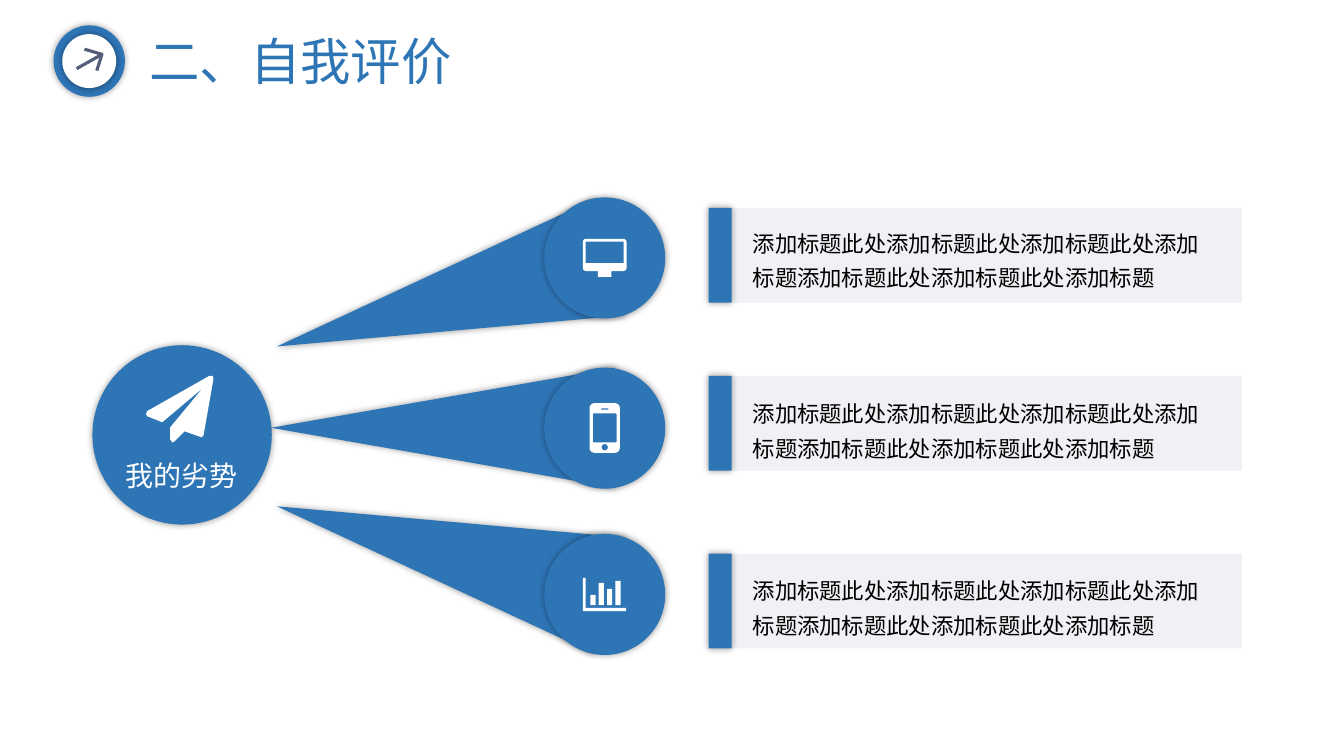
import math

from lxml import etree
from pptx import Presentation
from pptx import util as u
from pptx.dml import color
from pptx.enum import shapes, text
from pptx.oxml import ns

COLORS = {"blue": "2E75B6", "white": "FFFFFF", "slate": "545D79",
          "panel": "EBEEF2", "black": "000000"}
SHAPE = shapes.MSO_SHAPE
CJK = "Noto Sans CJK JP"
BODY = "添加标题此处添加标题此处添加标题此处添加标题添加标题此处添加标题此处添加标题"


def rgb(name):
    return color.RGBColor.from_string(COLORS[name])


def set_format(obj, values):
    for key, value in values.items():
        setattr(obj, key, value)


def sub(parent, tag, **attrs):
    return etree.SubElement(parent, ns.qn(tag), attrs)


def paint(sp, fill):
    sp.fill.solid()
    sp.fill.fore_color.rgb = rgb(fill)
    sp.line.fill.background()
    sp.shadow.inherit = False


def add_glow(sp):
    effects = sp._element.spPr.find(ns.qn("a:effectLst"))
    shadow = sub(effects, "a:outerShdw", blurRad=str(u.Pt(5)), dist="0",
                 dir="0", algn="ctr", rotWithShape="0")
    sub(sub(shadow, "a:srgbClr", val=COLORS["black"]), "a:alpha", val="40000")


def add_preset(s, kind, left, top, width, height, fill="blue", glow=True):
    sp = s.shapes.add_shape(kind, u.Cm(left), u.Cm(top), u.Cm(width), u.Cm(height))
    paint(sp, fill)
    if glow:
        add_glow(sp)
    return sp


def add_circle(s, cx, cy, d, fill="blue"):
    return add_preset(s, SHAPE.OVAL, cx - d / 2, cy - d / 2, d, d, fill)


def add_wedge(s, cx, cy, angle):
    w, h = 3.02, 8.66
    sp = add_preset(s, SHAPE.FLOWCHART_MERGE, cx - w / 2, cy - h / 2, w, h)
    sp.rotation = angle


def add_outline(s, contours, cx=0, cy=0, closed=True):
    builder = None
    for contour in contours:
        pts = [(u.Cm(cx + x), u.Cm(cy + y)) for x, y in contour]
        if builder is None:
            builder = s.shapes.build_freeform(*pts[0])
        else:
            builder.move_to(*pts[0])
        builder.add_line_segments(pts[1:], close=closed)
    sp = builder.convert_to_shape()
    paint(sp, "white")
    return sp


def box(left, top, right, bottom, r=0):
    if not r:
        return [(left, top), (right, top), (right, bottom), (left, bottom)]
    corners = [(right - r, bottom - r), (left + r, bottom - r),
               (left + r, top + r), (right - r, top + r)]
    steps = 6
    return [(x + r * math.cos(a), y + r * math.sin(a))
            for i, (x, y) in enumerate(corners)
            for a in [(i + k / steps) * math.pi / 2 for k in range(steps + 1)]]


def monitor():
    return [box(-0.55, -0.48, 0.55, 0.33, 0.08), box(-0.48, -0.41, 0.48, 0.13),
            box(-0.17, 0.33, 0.17, 0.48)]


def phone():
    return [box(-0.38, -0.63, 0.38, 0.62, 0.12), box(-0.3, -0.37, 0.3, 0.36, 0.02),
            box(-0.09, -0.5, 0.09, -0.47), box(-0.08, 0.4, 0.08, 0.56, 0.08)]


def bar_chart():
    axes = [(-0.55, 0.42), (-0.55, -0.42), (-0.48, -0.42), (-0.48, 0.34),
            (0.54, 0.34), (0.54, 0.42)]
    bars = [box(-0.36 + 0.21 * i, 0.27 - h, -0.23 + 0.21 * i, 0.27)
            for i, h in enumerate([0.26, 0.56, 0.41, 0.61])]
    return [axes] + bars


def write(sp, content, size, font, fill, frame=None, para=None):
    tf = sp.text_frame
    set_format(tf, {"word_wrap": True, "vertical_anchor": text.MSO_ANCHOR.TOP,
                    "auto_size": text.MSO_AUTO_SIZE.SHAPE_TO_FIT_TEXT, **(frame or {})})
    p = tf.paragraphs[0]
    set_format(p, {"alignment": text.PP_ALIGN.LEFT, **(para or {})})
    r = p.add_run()
    r.text = content
    set_format(r.font, {"size": u.Pt(size), "name": font})
    r.font.color.rgb = rgb(fill)
    sub(r.font._element, "a:ea", typeface=font)


def add_text(s, left, top, width, height, *args, **kwargs):
    sp = s.shapes.add_textbox(u.Cm(left), u.Cm(top), u.Cm(width), u.Cm(height))
    write(sp, *args, **kwargs)


def add_header(s):
    cx, cy = 2.25, 1.54
    add_circle(s, cx, cy, 1.8)
    add_circle(s, cx, cy, 1.36, "white")
    tip = (2.57, 1.37)
    head = add_outline(s, [[(2.13, 1.24), tip, (2.44, 1.78)]], closed=False)
    head.fill.background()
    shaft = s.shapes.add_connector(shapes.MSO_CONNECTOR.STRAIGHT, u.Cm(1.93), u.Cm(1.73),
                                   *map(u.Cm, tip))
    sub(shaft._element.spPr, "a:effectLst")
    for sp in (head, shaft):
        sp.line.color.rgb = rgb("slate")
        sp.line.width = u.Pt(2.25)
    title = s.shapes.title
    set_format(title, {"left": u.Cm(3.51), "top": u.Cm(0.64),
                       "width": u.Cm(14.43), "height": u.Cm(1.78)})
    write(title, "二、自我评价", 36, CJK, "blue")


def add_hub(s):
    add_circle(s, 4.59, 10.96, 4.52)
    add_outline(s, [[(5.38, 9.55), (5.13, 10.97), (5.08, 11.02), (4.65, 10.87),
                     (4.39, 11.13), (4.34, 11.15), (4.29, 11.07), (4.29, 10.77),
                     (5.11, 9.78), (4.09, 10.64), (3.71, 10.49), (3.68, 10.44),
                     (3.71, 10.36), (5.28, 9.47), (5.36, 9.47)]])
    margins = {"margin_" + side: 0 for side in ("left", "top", "right", "bottom")}
    add_text(s, 2.72, 11.56, 3.73, 0.84, "我的劣势", 20, CJK, "white",
             frame=margins, para={"alignment": text.PP_ALIGN.CENTER})


def add_card(s, top, text_top):
    height = 2.39
    panel = add_preset(s, SHAPE.RECTANGLE, 18.42, top, 12.88, height, "panel", False)
    sub(panel._element.spPr.find(".//" + ns.qn("a:srgbClr")), "a:alpha", val="80000")
    add_preset(s, SHAPE.RECTANGLE, 17.86, top, 0.58, height)
    add_text(s, 18.72, text_top, 12.29, 2, BODY, 16, "Calibri", "black",
             para={"line_spacing": 1.3})


def main():
    prs = Presentation()
    set_format(prs, {"slide_width": u.Cm(33.87), "slide_height": u.Cm(19.05)})
    s = prs.slides.add_slide(prs.slide_layouts[5])
    add_header(s)
    branches = [(7.61, 75, 6.5, monitor(), 5.24, 5.46),
                (10.78, 90, 10.79, phone(), 9.47, 9.75),
                (13.88, 105, 14.98, bar_chart(), 13.95, 14.22)]
    for wedge_y, angle, circle_y, icon, card_top, text_top in branches:
        add_wedge(s, 11.16, wedge_y, angle)
        add_circle(s, 15.24, circle_y, 3.05)
        add_outline(s, icon, 15.24, circle_y)
        add_card(s, card_top, text_top)
    add_hub(s)
    prs.save("out.pptx")


if __name__ == "__main__":
    main()
